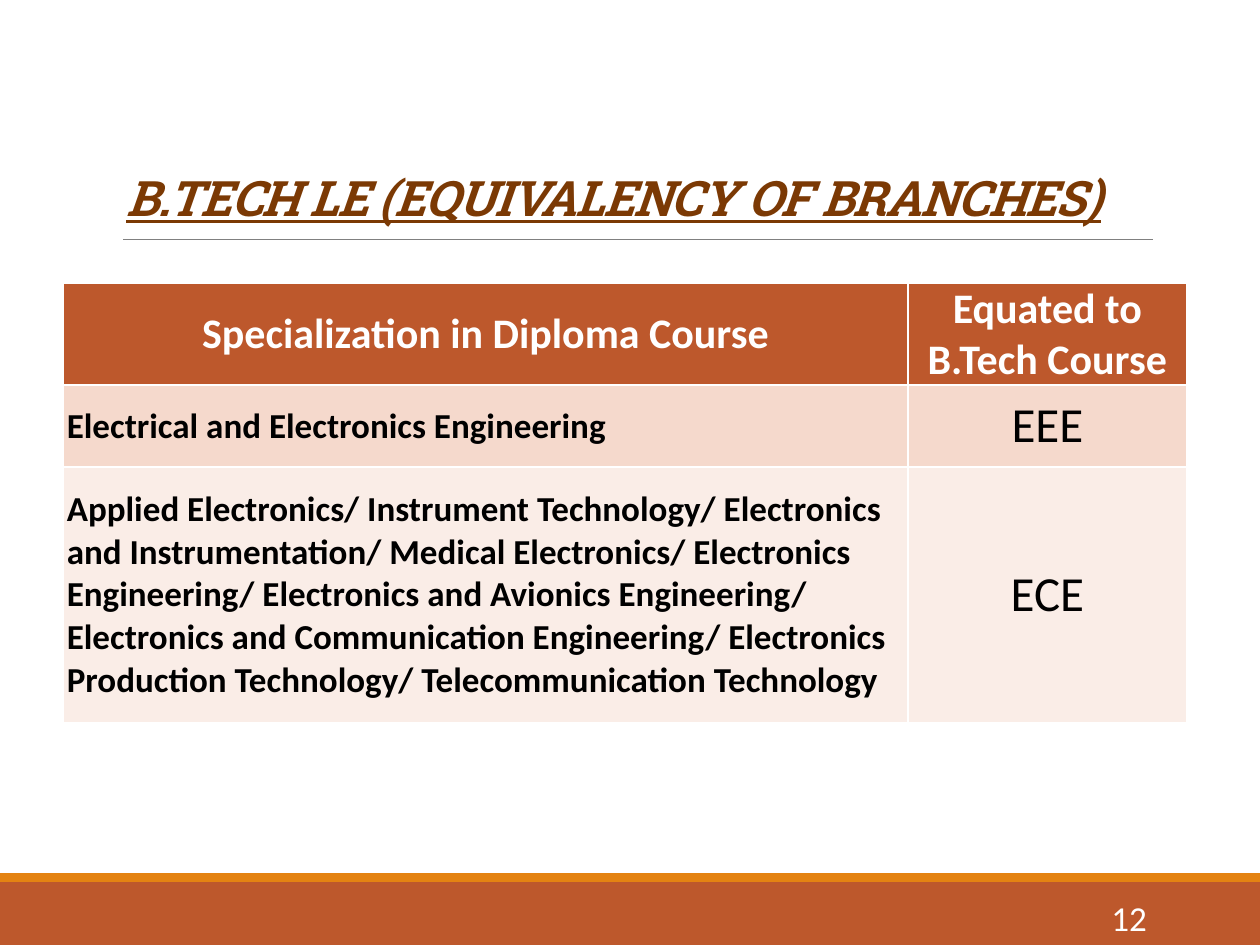
from pptx import Presentation
from pptx.dml.color import RGBColor
from pptx.enum import shapes, text
from pptx.oxml.ns import qn
from pptx.util import Pt
from lxml import etree

RUST = RGBColor(0xBD, 0x58, 0x2C)
ORANGE = RGBColor(0xE4, 0x83, 0x12)
BROWN = RGBColor(0x7B, 0x39, 0x04)
GRAY = RGBColor(0x80, 0x80, 0x80)
PEACH = RGBColor(0xF5, 0xD9, 0xCC)
BLUSH = RGBColor(0xFA, 0xED, 0xE7)
WHITE = RGBColor(0xFF, 0xFF, 0xFF)
BLACK = RGBColor(0, 0, 0)
LEFT, CENTER, RIGHT = text.PP_ALIGN.LEFT, text.PP_ALIGN.CENTER, text.PP_ALIGN.RIGHT
MIDDLE = text.MSO_ANCHOR.MIDDLE


def write(frame, words, align, color, **style):
    """Put one styled run in the frame's first paragraph and return the run."""
    par = frame.paragraphs[0]
    par.alignment = align
    run = par.add_run()
    run.text = words
    run.font.color.rgb = color
    for key, val in ({"name": "Calibri"} | style).items():
        setattr(run.font, key, val)
    return run


def add_box(left, top, width, height):
    frame = slide.shapes.add_textbox(Pt(left), Pt(top), Pt(width), Pt(height)).text_frame
    frame.word_wrap = True
    frame.vertical_anchor = MIDDLE
    frame.margin_top = frame.margin_bottom = 0
    return frame


prs = Presentation()
prs.slide_width, prs.slide_height = Pt(720), Pt(540)
slide = prs.slides.add_slide(prs.slide_layouts[6])

# Footer bands
for top, height, color in [(504, 36, RUST), (499, 5, ORANGE)]:
    band = slide.shapes.add_shape(
        shapes.MSO_SHAPE.RECTANGLE, 0, Pt(top), Pt(720), Pt(height))
    band.shadow.inherit = False
    band.fill.solid()
    band.fill.fore_color.rgb = color
    band.line.fill.background()

# Title and its rule
rule = slide.shapes.add_connector(
    shapes.MSO_CONNECTOR.STRAIGHT, Pt(70.5), Pt(136.8), Pt(658.8), Pt(136.8))
rule.line.color.rgb = GRAY
rule.line.width = Pt(0.5)
etree.SubElement(rule._element.spPr, qn("a:effectLst"))

title = write(add_box(65, 94, 624, 37), "B.TECH LE (EQUIVALENCY OF BRANCHES)", LEFT, BROWN,
              name="Roboto Slab", size=Pt(27.9), bold=True, italic=True, underline=True)
title.font._element.set("spc", "-50")

# Branch table
rows = [
    ("Specialization in Diploma Course", "Equated to B.Tech Course"),
    ("Electrical and Electronics Engineering", "EEE"),
    ("Applied Electronics/ Instrument Technology/ Electronics and Instrumentation/ "
     "Medical Electronics/ Electronics Engineering/ Electronics and Avionics Engineering/ "
     "Electronics and Communication Engineering/ Electronics Production Technology/ "
     "Telecommunication Technology", "ECE"),
]
fills = [RUST, PEACH, BLUSH]
table = slide.shapes.add_table(3, 2, Pt(36), Pt(162), Pt(642), Pt(251)).table
for col, width in zip(table.columns, [483, 159]):
    col.width = Pt(width)
for row, height in zip(table.rows, [58, 47, 146]):
    row.height = Pt(height)

for r, (pair, fill) in enumerate(zip(rows, fills)):
    for c, words in enumerate(pair):
        cell = table.cell(r, c)
        cell.fill.solid()
        cell.fill.fore_color.rgb = fill
        cell.vertical_anchor = MIDDLE
        cell.margin_left = cell.margin_right = Pt(2.2)
        cell.margin_top = cell.margin_bottom = 0
        head = r == 0
        size = 24 if head else (20, 28)[c]
        write(cell.text_frame, words, CENTER if head or c else LEFT,
              WHITE if head else BLACK, size=Pt(size), bold=head or c == 0)

# Page number
write(add_box(584.6, 510, 77.8, 29), "12", RIGHT, WHITE, size=Pt(20))

prs.save("out.pptx")
